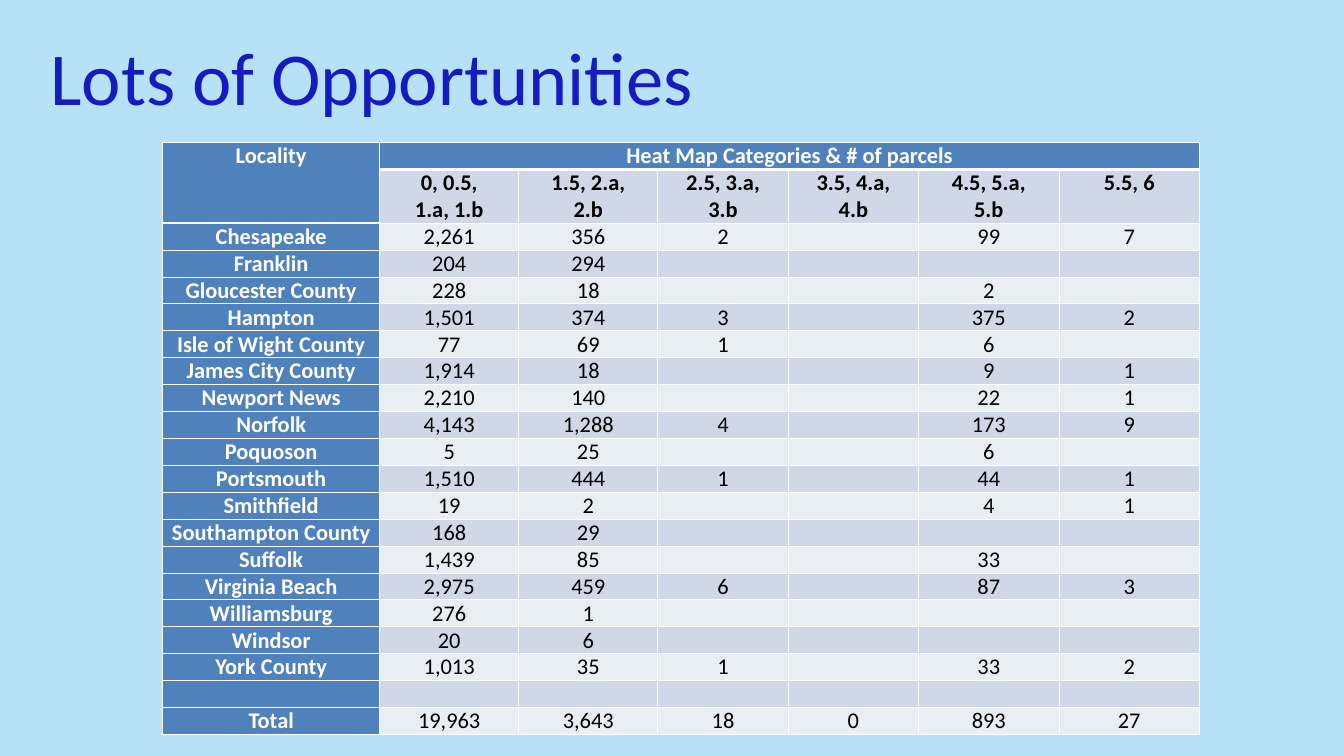
from pptx import Presentation
from pptx.dml.color import RGBColor
from pptx.enum.text import MSO_AUTO_SIZE, PP_ALIGN
from pptx.oxml import parse_xml
from pptx.oxml.ns import nsdecls
from pptx.util import Inches, Pt

SKY = RGBColor(0xB7, 0xE1, 0xF7)
TITLE_BLUE = RGBColor(0x15, 0x1C, 0xBF)
HEADER_BLUE = RGBColor(0x4F, 0x81, 0xBD)
BAND_DARK = RGBColor(0xD0, 0xD8, 0xE8)
BAND_LIGHT = RGBColor(0xE9, 0xED, 0xF4)
WHITE = RGBColor(0xFF, 0xFF, 0xFF)
BLACK = RGBColor(0, 0, 0)

COL_WIDTHS = [3.23, 2.07, 2.07, 1.94, 1.94, 2.09, 2.09]
ROW_HEIGHT = 0.4
ROWS = [
    ["Locality", "Heat Map Categories & # of parcels", "", "", "", "", ""],
    ["", "0, 0.5,\n1.a, 1.b", "1.5, 2.a,\n2.b", "2.5, 3.a,\n3.b",
     "3.5, 4.a,\n4.b", "4.5, 5.a,\n5.b", "5.5, 6"],
    ["Chesapeake", "2,261", "356", "2", "", "99", "7"],
    ["Franklin", "204", "294", "", "", "", ""],
    ["Gloucester County", "228", "18", "", "", "2", ""],
    ["Hampton", "1,501", "374", "3", "", "375", "2"],
    ["Isle of Wight County", "77", "69", "1", "", "6", ""],
    ["James City County", "1,914", "18", "", "", "9", "1"],
    ["Newport News", "2,210", "140", "", "", "22", "1"],
    ["Norfolk", "4,143", "1,288", "4", "", "173", "9"],
    ["Poquoson", "5", "25", "", "", "6", ""],
    ["Portsmouth", "1,510", "444", "1", "", "44", "1"],
    ["Smithfield", "19", "2", "", "", "4", "1"],
    ["Southampton County", "168", "29", "", "", "", ""],
    ["Suffolk", "1,439", "85", "", "", "33", ""],
    ["Virginia Beach", "2,975", "459", "6", "", "87", "3"],
    ["Williamsburg", "276", "1", "", "", "", ""],
    ["Windsor", "20", "6", "", "", "", ""],
    ["York County", "1,013", "35", "1", "", "33", "2"],
    ["", "", "", "", "", "", ""],
    ["Total", "19,963", "3,643", "18", "0", "893", "27"],
]


def write(tf, text, size, color, bold=False, align=PP_ALIGN.LEFT, spacing=None):
    """Fill a text frame with one paragraph per line of text."""
    for i, line in enumerate(text.split("\n")):
        p = tf.add_paragraph() if i else tf.paragraphs[0]
        p.alignment = align
        if spacing:
            p.line_spacing = Pt(spacing)
        r = p.add_run()
        r.text = line
        r.font.name = "Calibri"
        r.font.size = Pt(size)
        r.font.bold = bold
        r.font.color.rgb = color


def add_borders(cell, top, bottom):
    """Draw white cell edges; top and bottom are widths in points."""
    tc_pr = cell._tc.get_or_add_tcPr()
    for side, width in (("L", 1), ("R", 1), ("T", top), ("B", bottom)):
        tc_pr.append(parse_xml(
            f'<a:ln{side} {nsdecls("a")} w="{Pt(width)}"><a:solidFill>'
            f'<a:srgbClr val="{WHITE}"/></a:solidFill></a:ln{side}>'))


prs = Presentation()
prs.slide_width, prs.slide_height = Inches(20), Inches(11.25)
s = prs.slides.add_slide(prs.slide_layouts[6])
s.background.fill.solid()
s.background.fill.fore_color.rgb = SKY

# Title
tf = s.shapes.add_textbox(Inches(0.75), Inches(0.46), Inches(14.95), Inches(1.35)).text_frame
tf.margin_left = tf.margin_right = tf.margin_top = tf.margin_bottom = 0
tf.word_wrap = True
tf.auto_size = MSO_AUTO_SIZE.SHAPE_TO_FIT_TEXT
write(tf, "Lots of Opportunities", size=80, color=TITLE_BLUE, spacing=96)

# Parcel table
table = s.shapes.add_table(
    len(ROWS), len(COL_WIDTHS), Inches(2.42), Inches(2.12),
    Inches(sum(COL_WIDTHS)), Inches(ROW_HEIGHT * (len(ROWS) + 1))).table
table.first_row = table.horz_banding = False
for column, width in zip(table.columns, COL_WIDTHS):
    column.width = Inches(width)

for row, values in enumerate(ROWS):
    table.rows[row].height = Inches(ROW_HEIGHT * (2 if row == 1 else 1))
    for col, text in enumerate(values):
        cell = table.cell(row, col)
        cell.margin_left = cell.margin_right = Inches(0.07)
        cell.margin_top = cell.margin_bottom = 0
        header = row == 0 or col == 0
        header_end = 1 if col == 0 else 0
        add_borders(cell, top=3 if row == header_end + 1 else 1,
                    bottom=3 if row <= header_end else 1)
        cell.fill.solid()
        band = BAND_DARK if row % 2 else BAND_LIGHT
        cell.fill.fore_color.rgb = HEADER_BLUE if header else band
        if text:
            write(cell.text_frame, text, size=24, color=WHITE if header else BLACK,
                  bold=header or row == 1, align=PP_ALIGN.CENTER)

table.cell(0, 0).merge(table.cell(1, 0))
table.cell(0, 1).merge(table.cell(0, 6))

prs.save("out.pptx")
